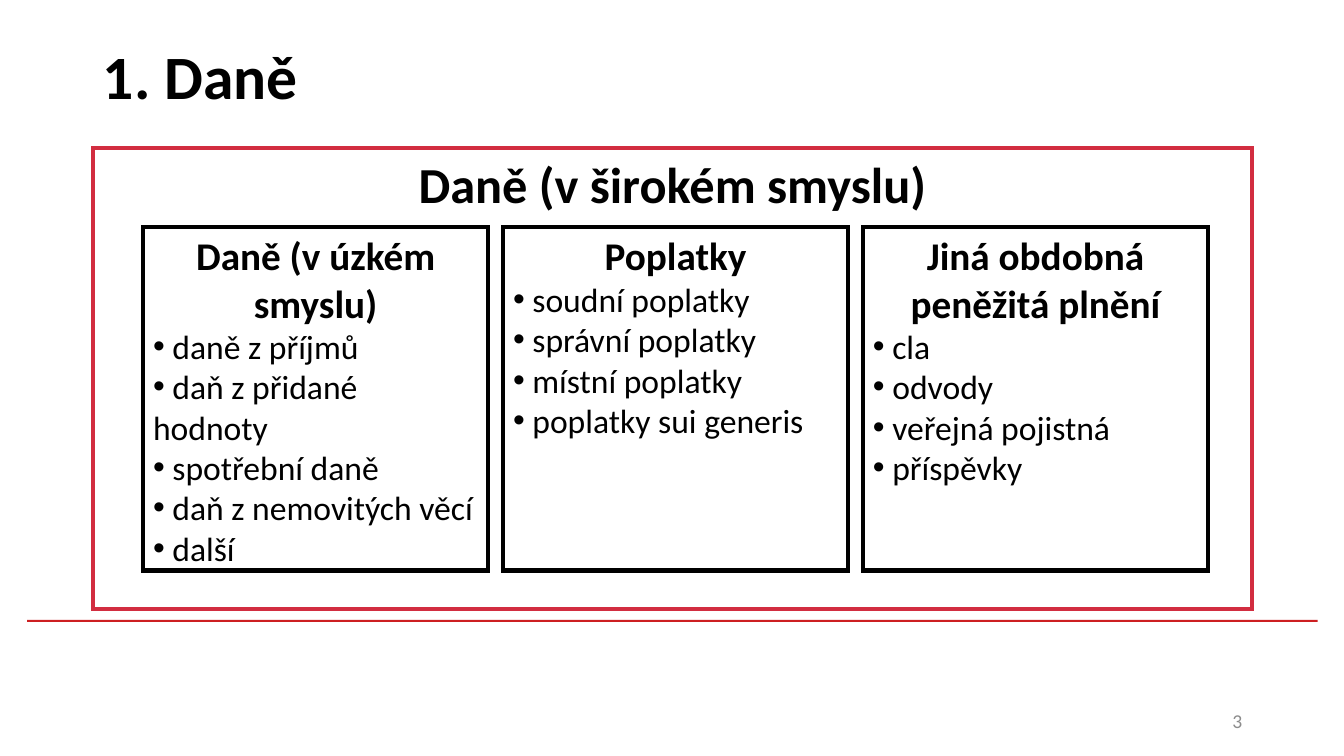
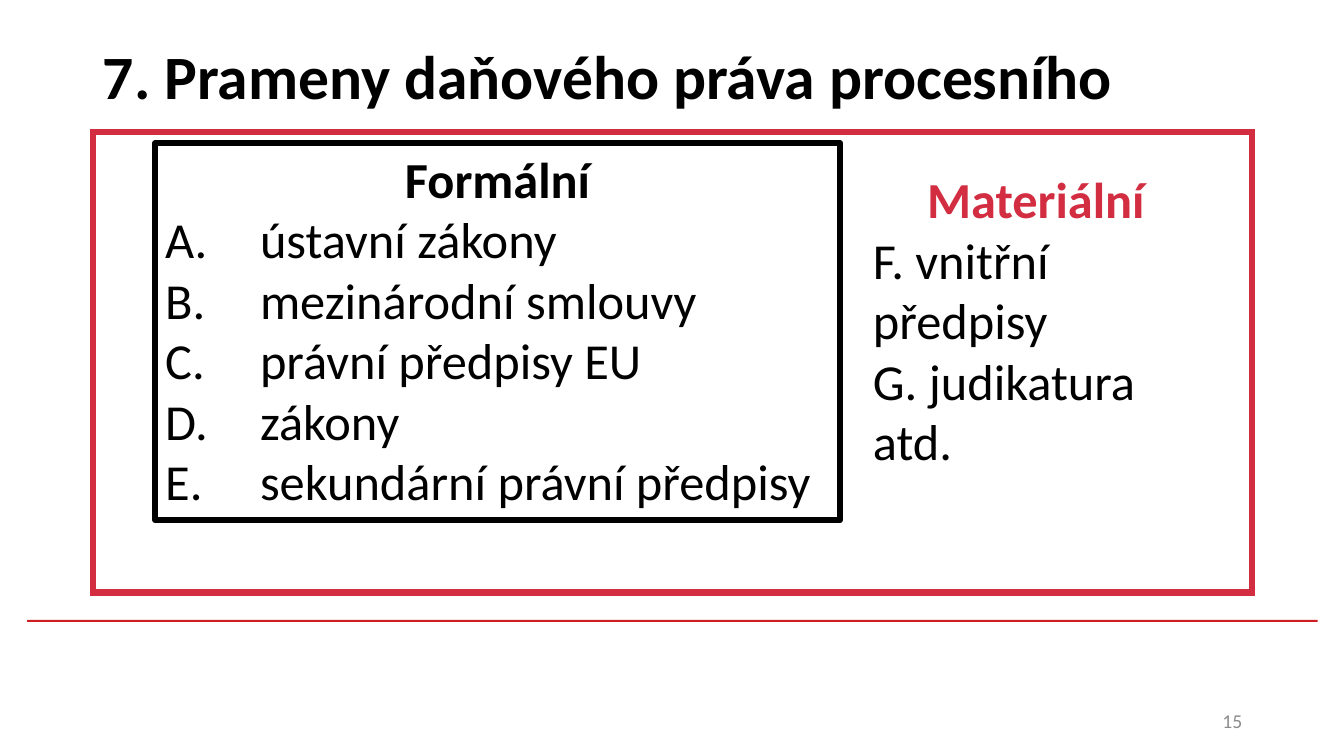
from dataclasses import dataclass
from typing import Any, Optional

from lxml import etree
from pptx import Presentation
from pptx import util as u
from pptx.dml.color import RGBColor
from pptx.enum import shapes, text
from pptx.oxml import ns

PX = 9144
FONT = "Calibri"
COLORS = {
    "black": "000000",
    "white": "FFFFFF",
    "frame": "D22D40",
    "rule": "CD1F21",
    "number": "8C8C8C",
}
FRAME_X, FRAME_W, FRAME_H = 92, 1150, 457
COLUMN_X, COLUMN_Y, COLUMN_W, COLUMN_H, COLUMN_GAP = 142, 225, 342, 341, 15
DOT = ("buChar", {"char": "•"})
LETTER = ("buAutoNum", {"type": "alphaUcPeriod"})
LEFT, CENTER, RIGHT, JUSTIFY = (
    text.PP_ALIGN.LEFT,
    text.PP_ALIGN.CENTER,
    text.PP_ALIGN.RIGHT,
    text.PP_ALIGN.JUSTIFY,
)
TOP, MIDDLE = text.MSO_ANCHOR.TOP, text.MSO_ANCHOR.MIDDLE


@dataclass(frozen=True)
class Box:
    x: int
    y: int
    w: int
    h: int

    def emu(self) -> tuple[int, ...]:
        return tuple(v * PX for v in (self.x, self.y, self.w, self.h))


@dataclass(frozen=True)
class Line:
    words: str
    size: int
    bold: bool = False
    color: str = "black"
    align: Any = LEFT
    bullet: Optional[tuple[str, dict[str, str]]] = None
    indent: int = 0


@dataclass(frozen=True)
class Column:
    heading: str
    items: tuple[str, ...]


TAX_COLUMNS = (
    Column(
        "Daně (v úzkém smyslu)",
        (
            "daně z příjmů",
            "daň z přidané hodnoty",
            "spotřební daně",
            "daň z nemovitých věcí",
            "další",
        ),
    ),
    Column(
        "Poplatky",
        ("soudní poplatky", "správní poplatky", "místní poplatky", "poplatky sui generis"),
    ),
    Column(
        "Jiná obdobná peněžitá plnění",
        ("cla", "odvody", "veřejná pojistná", "příspěvky"),
    ),
)
FORMAL_SOURCES = (
    "ústavní zákony",
    "mezinárodní smlouvy",
    "právní předpisy EU",
    "zákony",
    "sekundární právní předpisy",
)


def rgb(name: str) -> RGBColor:
    return RGBColor.from_string(COLORS[name])


def apply(target: Any, values: dict[str, Any]) -> None:
    for name, value in values.items():
        setattr(target, name, value)


def write(tf: Any, lines: list[Line], anchor: Any = TOP) -> None:
    apply(tf, {"word_wrap": True, "auto_size": text.MSO_AUTO_SIZE.NONE, "vertical_anchor": anchor})
    for i, line in enumerate(lines):
        p = tf.add_paragraph() if i else tf.paragraphs[0]
        p.alignment = line.align
        if line.bullet:
            tag, attributes = line.bullet
            p_pr = p._p.get_or_add_pPr()
            p_pr.set("marL", str(line.indent * PX))
            p_pr.set("indent", str(-line.indent * PX))
            etree.SubElement(p_pr, ns.qn("a:buFont"), typeface="Arial" if line.bullet == DOT else "+mj-lt")
            etree.SubElement(p_pr, ns.qn(f"a:{tag}"), attributes)
        r = p.add_run()
        r.text = line.words
        apply(r.font, {"name": FONT, "size": u.Pt(line.size), "bold": line.bold})
        r.font.color.rgb = rgb(line.color)


def add_rect(
    s: Any,
    box: Box,
    fill: Optional[str] = None,
    line: Optional[str] = None,
    width: float = 0,
    mitered: bool = True,
) -> Any:
    sp = s.shapes.add_shape(shapes.MSO_SHAPE.RECTANGLE, *box.emu())
    sp.shadow.inherit = False
    if fill:
        sp.fill.solid()
        sp.fill.fore_color.rgb = rgb(fill)
    else:
        sp.fill.background()
    if line:
        sp.line.color.rgb = rgb(line)
        sp.line.width = u.Pt(width)
        if mitered:
            etree.SubElement(sp.line._get_or_add_ln(), ns.qn("a:miter"), lim="800000")
    else:
        sp.line.fill.background()
    return sp


def add_text(s: Any, box: Box, lines: list[Line], anchor: Any = TOP) -> None:
    write(s.shapes.add_textbox(*box.emu()).text_frame, lines, anchor)


def add_base(prs: Any, title: str, number: int) -> Any:
    s = prs.slides.add_slide(prs.slide_layouts[5])
    sp = s.shapes.title
    apply(sp, dict(zip(("left", "top", "width", "height"), Box(92, 2, 1150, 145).emu())))
    write(sp.text_frame, [Line(title, 44, True)], MIDDLE)
    add_rect(s, Box(27, 615, 1280, 2), "rule")
    add_text(s, Box(942, 695, 300, 40), [Line(str(number), 14, color="number", align=RIGHT)], MIDDLE)
    return s


def build_taxes(prs: Any) -> None:
    s = add_base(prs, "1. Daně", 3)
    frame = add_rect(s, Box(FRAME_X, 147, FRAME_W, FRAME_H), "white", "frame", 3)
    write(frame.text_frame, [Line("Daně (v širokém smyslu)", 36, True, align=CENTER)])
    for i, column in enumerate(TAX_COLUMNS):
        x = COLUMN_X + i * (COLUMN_W + COLUMN_GAP)
        sp = add_rect(s, Box(x, COLUMN_Y, COLUMN_W, COLUMN_H), "white", "black", 3)
        items = [Line(f" {item}", 24, bullet=DOT) for item in column.items]
        write(sp.text_frame, [Line(column.heading, 28, True, align=CENTER), *items])


def build_sources(prs: Any) -> None:
    s = add_base(prs, "7. Prameny daňového práva procesního", 15)
    add_rect(s, Box(FRAME_X, 131, FRAME_W, FRAME_H), "white", "frame", 4.5)
    add_text(
        s,
        Box(856, 162, 343, 374),
        [
            Line("Materiální", 36, True, "frame", CENTER),
            Line("F. vnitřní předpisy", 36),
            Line("G. judikatura", 36, align=JUSTIFY),
            Line("atd.", 36, align=JUSTIFY),
        ],
    )
    formal = add_rect(s, Box(154, 142, 679, 374), line="black", width=4.5, mitered=False)
    items = [Line(item, 36, bullet=LETTER, indent=94) for item in FORMAL_SOURCES]
    write(formal.text_frame, [Line("Formální", 36, True, align=CENTER), *items])


def main() -> None:
    prs = Presentation()
    apply(prs, {"slide_width": 1333 * PX, "slide_height": 750 * PX})
    build_taxes(prs)
    build_sources(prs)
    prs.save("out.pptx")


if __name__ == "__main__":
    main()
